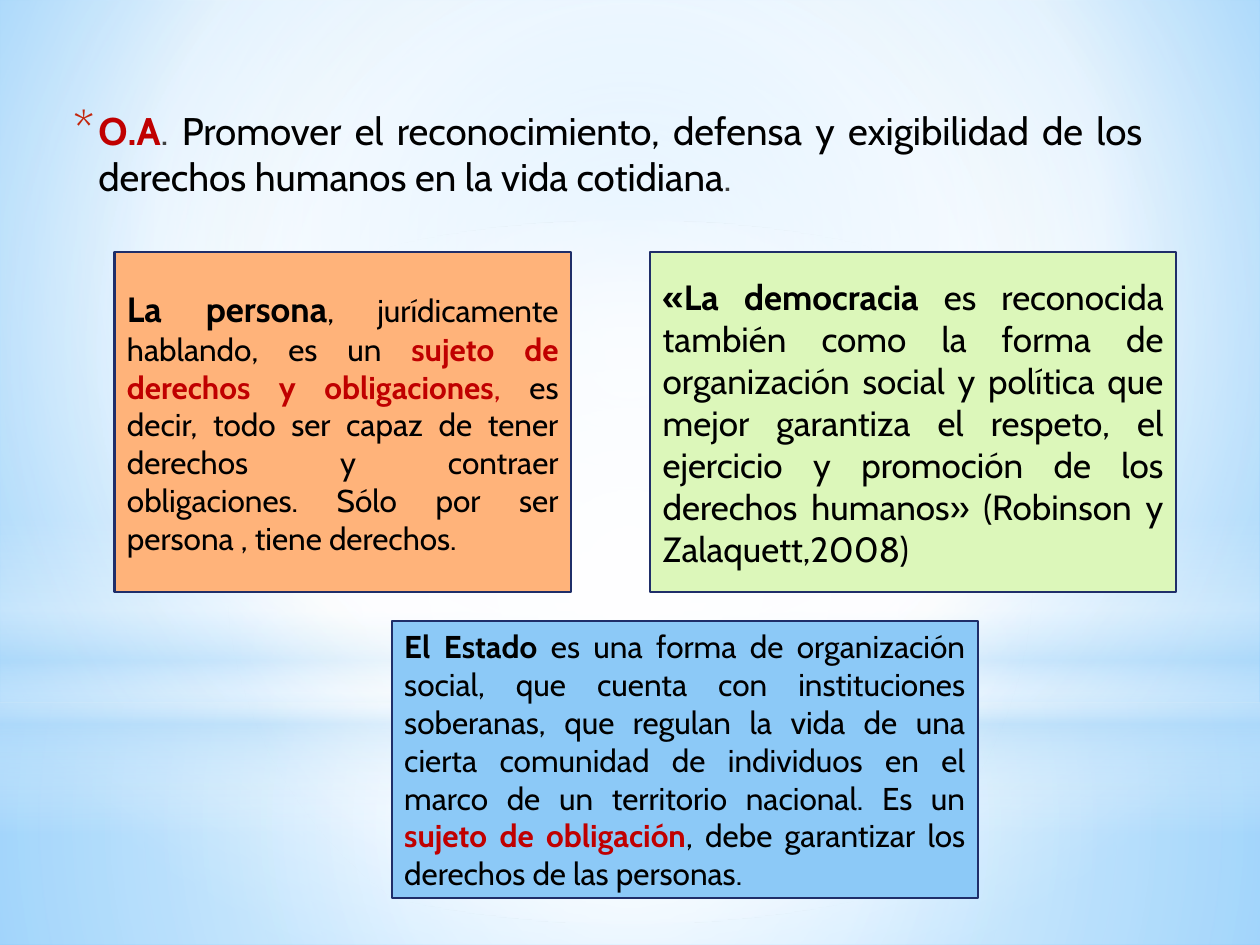
from lxml.etree import SubElement
from pptx import Presentation
from pptx.dml.color import RGBColor
from pptx.enum.shapes import MSO_SHAPE
from pptx.enum.text import MSO_ANCHOR, MSO_AUTO_SIZE, PP_ALIGN
from pptx.oxml import parse_xml
from pptx.oxml.ns import nsdecls, qn
from pptx.util import Cm, Pt

COLORS = {
    "text": "000000", "accent": "C00000", "soft": "404040", "bullet": "C3260C",
    "border": "1F2E69", "orange": "FFB37A", "green": "DCF7BA", "blue": "8CC9F7",
    "white": "FFFFFF", "mist": "B4DCFA", "sky": "9ED5FF", "deep": "5BB9FF",
}
CENTER = (50, 50, 50, 50)


def rgb(name):
    return RGBColor.from_string(COLORS[name])


def set_gradient(fill_parent, stops, focus=None):
    """Replace the solid fill by (position, color, opacity) stops, circular
    around focus (left, top, right, bottom) or else running downwards."""
    gs = "".join(
        f'<a:gs pos="{pos * 1000}"><a:srgbClr val="{COLORS[color]}">'
        f'<a:alpha val="{alpha * 1000}"/></a:srgbClr></a:gs>'
        for pos, color, alpha in stops)
    if focus:
        sides = " ".join(f'{k}="{v * 1000}"' for k, v in zip("ltrb", focus))
        shade = f'<a:path path="circle"><a:fillToRect {sides}/></a:path>'
    else:
        shade = '<a:lin ang="5400000" scaled="0"/>'
    grad = parse_xml(f'<a:gradFill {nsdecls("a")} rotWithShape="1">'
                     f'<a:gsLst>{gs}</a:gsLst>{shade}</a:gradFill>')
    solid = fill_parent.find(qn("a:solidFill"))
    fill_parent.replace(solid, grad)


def add_filled_shape(s, kind, box, color):
    sp = s.shapes.add_shape(kind, *map(Cm, box))
    sp.shadow.inherit = False
    sp.fill.solid()
    sp.fill.fore_color.rgb = rgb(color)
    return sp


def add_backdrop(s, width, height, front):
    """Layer the soft light of the theme behind the shape in front."""
    s.background.fill.solid()
    bg_pr = s.background._cSld.find(qn("p:bg")).find(qn("p:bgPr"))
    set_gradient(bg_pr, [(0, "sky", 100), (60, "white", 100), (100, "deep", 100)],
                 (20, 10, 20, 60))
    horizon = 14.17
    layers = [
        (MSO_SHAPE.RECTANGLE, horizon, height - horizon,
         [(0, "white", 91), (37, "white", 76), (100, "mist", 79)], CENTER),
        (MSO_SHAPE.RECTANGLE, 0, horizon,
         [(0, "white", 89), (48, "white", 62), (100, "mist", 79)], CENTER),
        (MSO_SHAPE.RECTANGLE, 10.46, 6.35,
         [(0, "white", 0), (29, "white", 30), (45, "mist", 40),
          (55, "white", 26), (65, "mist", 60), (100, "white", 0)], None),
        (MSO_SHAPE.OVAL, 4.45, horizon,
         [(0, "white", 100), (56, "white", 0)], CENTER),
    ]
    for kind, top, layer_height, stops, focus in layers:
        sp = add_filled_shape(s, kind, (0, top, width, layer_height), "white")
        sp.line.fill.background()
        set_gradient(sp._element.spPr, stops, focus)
        front._element.addprevious(sp._element)


def write_runs(p, size, runs):
    """Fill a justified paragraph with (text, color, bold[, size]) runs."""
    p.alignment = PP_ALIGN.JUSTIFY
    p.font.name = "Cabin"
    p.font.size = Pt(size)
    for text, color, bold, *own_size in runs:
        r = p.add_run()
        r.text = text
        r.font.name = "Cabin"
        r.font.size = Pt(own_size[0] if own_size else size)
        r.font.bold = bold
        r.font.color.rgb = rgb(color)


def set_objective(body, box, runs):
    body.left, body.top, body.width, body.height = map(Cm, box)
    tf = body.text_frame
    tf.auto_size = MSO_AUTO_SIZE.NONE
    tf.vertical_anchor = MSO_ANCHOR.TOP
    p = tf.paragraphs[0]
    write_runs(p, 22, runs)
    p.space_after = Pt(3)
    p_pr = p._p.get_or_add_pPr()
    p_pr.set("marL", str(Cm(0.64)))
    p_pr.set("indent", str(Cm(-0.51)))
    bullet = [("buClr", {}), ("buSzPct", {"val": "130000"}),
              ("buFont", {"typeface": "Cabin"}), ("buChar", {"char": "*"})]
    def_rpr = p_pr.find(qn("a:defRPr"))
    for tag, attrs in bullet:
        el = SubElement(p_pr, qn(f"a:{tag}"), attrs)
        if tag == "buClr":
            SubElement(el, qn("a:srgbClr"), val=COLORS["bullet"])
    if def_rpr is not None:
        p_pr.append(def_rpr)


def add_concept(s, box, fill, size, runs):
    sp = add_filled_shape(s, MSO_SHAPE.RECTANGLE, box, fill)
    sp.line.color.rgb = rgb("border")
    sp.line.width = Pt(1.25)
    tf = sp.text_frame
    tf.word_wrap = True
    tf.vertical_anchor = MSO_ANCHOR.MIDDLE
    write_runs(tf.paragraphs[0], size, runs)


def main():
    prs = Presentation()
    width, height = 25.4, 19.05
    prs.slide_width, prs.slide_height = Cm(width), Cm(height)
    s = prs.slides.add_slide(prs.slide_layouts[1])
    title, body = s.placeholders
    title._element.getparent().remove(title._element)

    add_backdrop(s, width, height, body)
    set_objective(body, (1.09, 2.03, 22.2, 2.69), [
        ("O.A", "accent", True),
        (". ", "soft", False),
        ("Promover el reconocimiento, defensa y exigibilidad de los derechos "
         "humanos en la vida cotidiana", "text", False),
        (".", "soft", False),
    ])
    add_concept(s, (2.31, 5.08, 9.2, 6.86), "orange", 18, [
        ("La persona", "text", True, 20),
        (", jurídicamente hablando, es un ", "text", False),
        ("sujeto de derechos y obligaciones", "accent", True),
        (", ", "accent", False),
        ("es decir, todo ser capaz de tener derechos y contraer obligaciones. "
         "Sólo por ser persona , tiene derechos.", "text", False),
    ])
    add_concept(s, (13.11, 5.08, 10.6, 6.86), "green", 20, [
        ("«La democracia ", "text", True),
        ("es reconocida también como la forma de organización social y política "
         "que mejor garantiza el respeto, el ejercicio y promoción de los "
         "derechos humanos» (Robinson y Zalaquett,2008)", "text", False),
    ])
    add_concept(s, (7.9, 12.52, 11.81, 5.59), "blue", 18, [
        ("El Estado ", "text", True),
        ("es una forma de organización social, que cuenta con instituciones "
         "soberanas, que regulan la vida de una cierta comunidad de individuos "
         "en el marco de un territorio nacional. Es un ", "text", False),
        ("sujeto de obligación", "accent", True),
        (", debe garantizar los derechos de las personas.", "text", False),
    ])
    prs.save("out.pptx")


if __name__ == "__main__":
    main()
